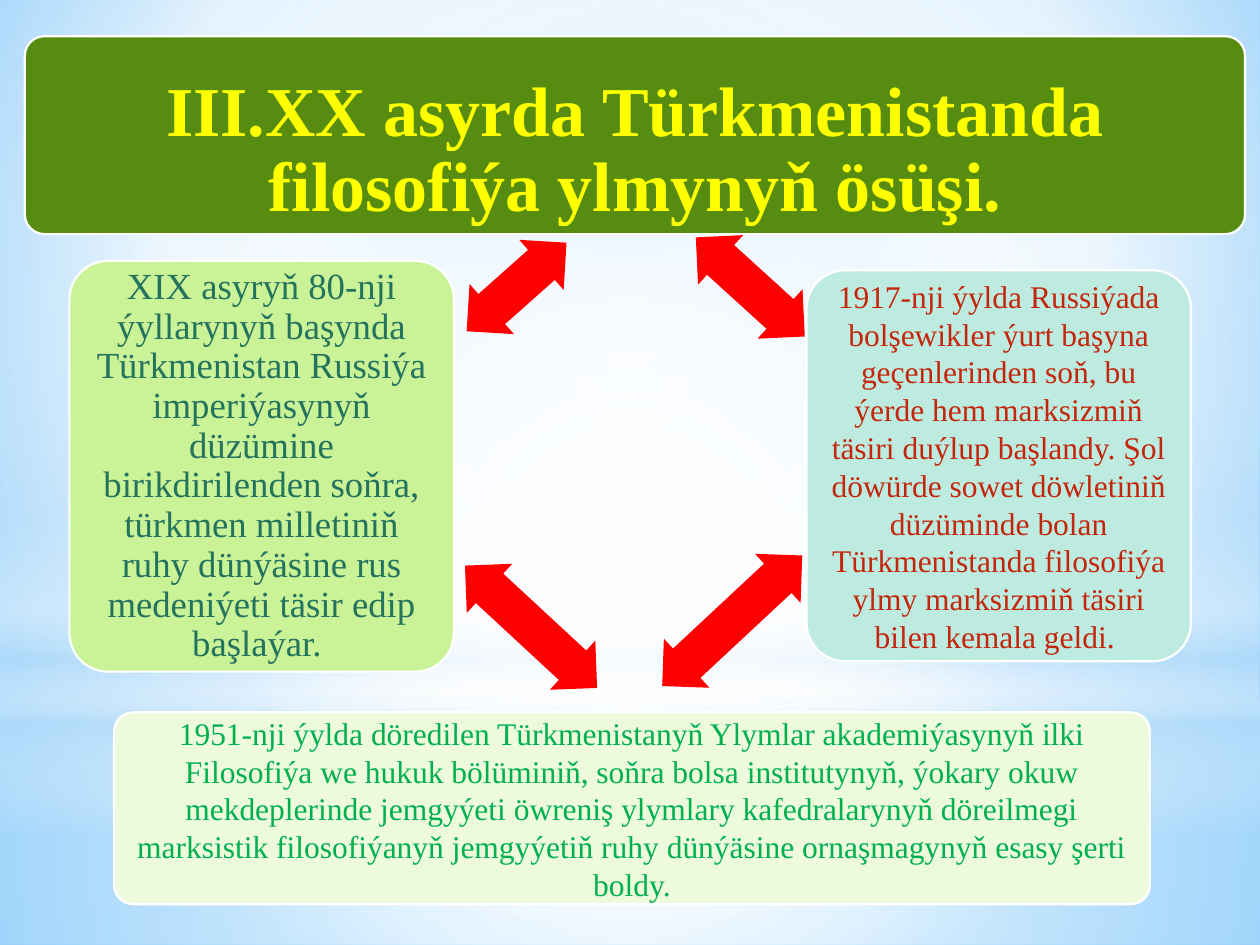
from lxml import etree
from pptx import Presentation
from pptx import util as u
from pptx.dml.color import RGBColor
from pptx.enum import shapes, text
from pptx.oxml import parse_xml
from pptx.oxml.ns import nsdecls, qn

FONT = "Times New Roman"
COLOURS = {
    "white": "FFFFFF", "sky": "9ED5FF", "deep_sky": "5BB9FF", "haze": "B4DCFA",
    "title_fill": "568D11", "title_text": "FFFF00",
    "left_fill": "CAF297", "left_text": "23735D",
    "right_fill": "BEEBDF", "right_text": "C3260C",
    "bottom_fill": "EDFBDC", "bottom_text": "00B050",
    "arrow": "FF0000",
}
CENTRE = (50, 50, 50, 50)


def colour(name):
    return RGBColor.from_string(COLOURS[name])


def set_gradient(fill, owner, stops, focus=None):
    """Stops are (position, colour, opacity); without a focus it runs downwards."""
    fill.gradient()
    old = next(owner.iter(qn("a:gradFill")))
    new = parse_xml(f'<a:gradFill {nsdecls("a")} rotWithShape="1"><a:gsLst/></a:gradFill>')
    for position, name, opacity in stops:
        stop = etree.SubElement(new[0], qn("a:gs"), pos=str(position * 1000))
        tint = etree.SubElement(stop, qn("a:srgbClr"), val=COLOURS[name])
        if opacity < 100:
            etree.SubElement(tint, qn("a:alpha"), val=str(opacity * 1000))
    if focus:
        circle = etree.SubElement(new, qn("a:path"), {"path": "circle"})
        sides = {side: str(value * 1000) for side, value in zip("ltrb", focus)}
        etree.SubElement(circle, qn("a:fillToRect"), sides)
    else:
        etree.SubElement(new, qn("a:lin"), ang="5400000", scaled="0")
    old.getparent().replace(old, new)


def add_shape(slide, kind, box):
    shape = slide.shapes.add_shape(kind, *(u.Cm(value) for value in box))
    shape.shadow.inherit = False
    shape.line.fill.background()
    return shape


def add_glow(slide, kind, top, height, stops, focus=None):
    shape = add_shape(slide, kind, (0, top, 25.4, height))
    set_gradient(shape.fill, shape._element.spPr, stops, focus)


def add_panel(slide, name, box, words, size, inset, spacing=1.0, bold=False, extra_top=0):
    shape = add_shape(slide, shapes.MSO_SHAPE.ROUNDED_RECTANGLE, box)
    shape.adjustments[0] = 0.1
    shape.fill.solid()
    shape.fill.fore_color.rgb = colour(name + "_fill")
    shape.line.color.rgb = colour("white")
    shape.line.width = u.Pt(1.25)

    frame = shape.text_frame
    frame.word_wrap = True
    frame.vertical_anchor = text.MSO_ANCHOR.MIDDLE
    frame.margin_left = frame.margin_right = frame.margin_bottom = u.Cm(inset)
    frame.margin_top = u.Cm(inset + extra_top)
    paragraph = frame.paragraphs[0]
    paragraph.alignment = text.PP_ALIGN.CENTER
    paragraph.line_spacing = spacing
    run = paragraph.add_run()
    run.text = words
    run.font.name = FONT
    run.font.size = u.Pt(size)
    run.font.bold = bold
    run.font.color.rgb = colour(name + "_text")


def add_arrow(slide, left, top, length, angle):
    shape = add_shape(slide, shapes.MSO_SHAPE.LEFT_RIGHT_ARROW, (left, top, length, 1.35))
    shape.adjustments[0] = 0.6
    shape.adjustments[1] = 0.5
    shape.rotation = angle
    shape.fill.solid()
    shape.fill.fore_color.rgb = colour("arrow")


def add_backdrop(slide):
    background = slide.background
    set_gradient(background.fill, slide._element,
                 [(0, "sky", 100), (60, "white", 100), (100, "deep_sky", 100)],
                 (20, 10, 20, 60))
    rectangle = shapes.MSO_SHAPE.RECTANGLE
    add_glow(slide, rectangle, 14.17, 4.88,
             [(0, "white", 91), (37, "white", 76), (100, "haze", 79)], CENTRE)
    add_glow(slide, rectangle, 0, 14.17,
             [(0, "white", 89), (48, "white", 62), (100, "haze", 79)], CENTRE)
    add_glow(slide, rectangle, 10.46, 6.35,
             [(0, "white", 0), (29, "white", 30), (45, "haze", 40),
              (55, "white", 26), (65, "haze", 60), (100, "white", 0)])
    add_glow(slide, shapes.MSO_SHAPE.OVAL, 4.45, 14.17,
             [(0, "white", 100), (56, "white", 0)], CENTRE)


def main():
    presentation = Presentation()
    presentation.slide_width, presentation.slide_height = u.Cm(25.4), u.Cm(19.05)
    slide = presentation.slides.add_slide(presentation.slide_layouts[6])
    add_backdrop(slide)

    # Title and the three stages around the cycle
    add_panel(slide, "title", (0.5, 0.73, 24.6, 3.99),
              "III.ХХ asyrda Türkmenistanda filosofiýa ylmynyň ösüşi.",
              40, 0.43, spacing=0.9, bold=True, extra_top=0.66)
    add_panel(slide, "right", (16.26, 5.45, 7.75, 7.88),
              "1917-nji ýylda Russiýada bolşewikler ýurt başyna geçenlerinden soň, "
              "bu ýerde hem marksizmiň täsiri duýlup başlandy. Şol döwürde sowet "
              "döwletiniň düzüminde bolan Türkmenistanda filosofiýa ylmy marksizmiň "
              "täsiri bilen kemala geldi. ", 18, 0.18)
    add_panel(slide, "bottom", (2.3, 14.36, 20.88, 3.87),
              "1951-nji ýylda döredilen Türkmenistanyň Ylymlar akademiýasynyň ilki "
              "Filosofiýa we hukuk bölüminiň, soňra bolsa institutynyň, ýokary okuw "
              "mekdeplerinde jemgyýeti öwreniş ylymlary kafedralarynyň döreilmegi "
              "marksistik filosofiýanyň jemgyýetiň ruhy dünýäsine ornaşmagynyň esasy "
              "şerti boldy.", 18, 0.18)
    add_panel(slide, "left", (1.4, 5.26, 7.75, 8.28),
              "ХIХ asyryň 80-nji ýyllarynyň başynda Türkmenistan Russiýa "
              "imperiýasynyň düzümine birikdirilenden soňra, türkmen milletiniň ruhy "
              "dünýäsine rus medeniýeti täsir edip başlaýar. ", 21, 0.23, spacing=0.9)

    # Two-way arrows, clockwise from the top right
    for arrow in ((13.64, 5.11, 2.97, 42.3), (12.83, 11.84, 3.86, 137),
                  (8.89, 11.96, 3.63, 222.8), (9.07, 5.11, 2.69, 318.4)):
        add_arrow(slide, *arrow)

    presentation.save("out.pptx")


if __name__ == "__main__":
    main()
